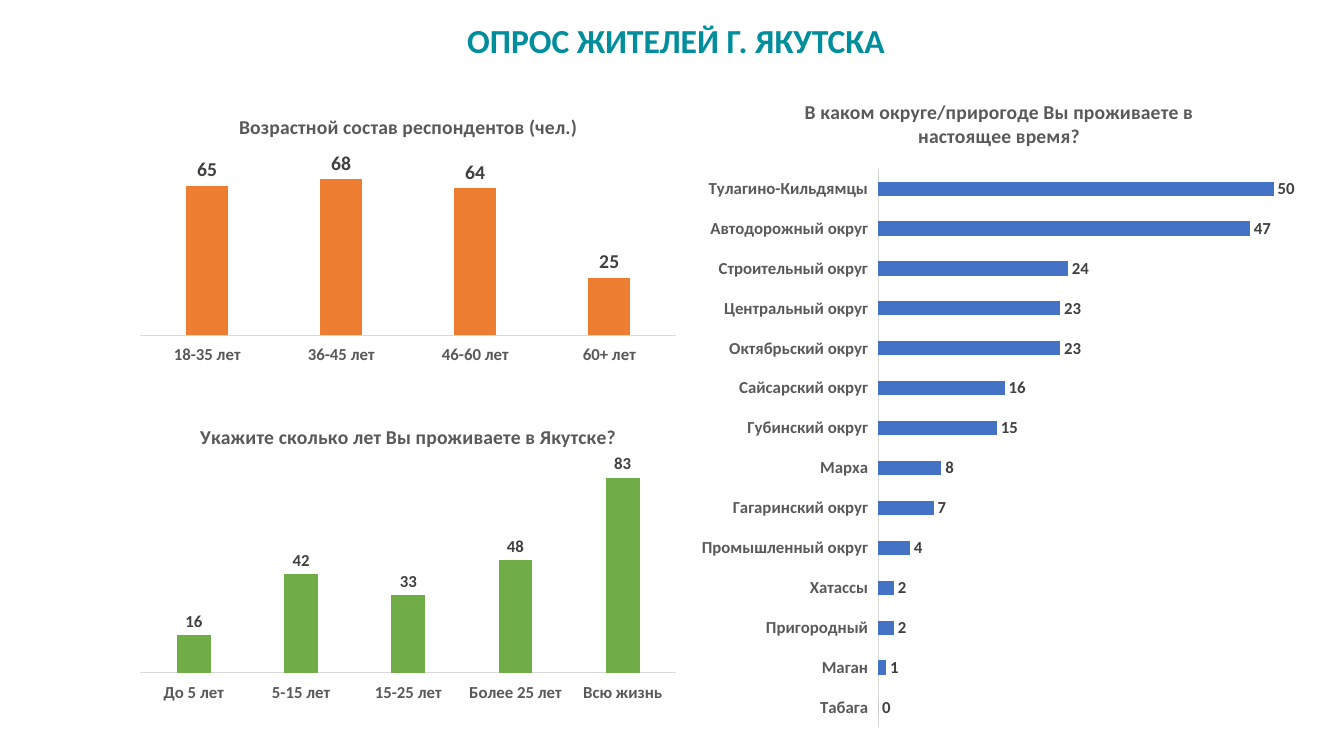
from dataclasses import dataclass

from pptx import Presentation
from pptx.chart.chart import Chart
from pptx.chart.data import CategoryChartData
from pptx.dml.color import RGBColor
from pptx.enum.chart import XL_CHART_TYPE as Kind
from pptx.enum.chart import XL_LABEL_POSITION as Pos
from pptx.enum.chart import XL_TICK_LABEL_POSITION as Tick
from pptx.enum.chart import XL_TICK_MARK as Mark
from pptx.enum.text import MSO_ANCHOR as Anchor
from pptx.enum.text import MSO_AUTO_SIZE as Fit
from pptx.enum.text import PP_ALIGN as Align
from pptx.oxml import parse_xml
from pptx.oxml.ns import nsdecls, qn
from pptx.slide import Slide
from pptx.text.text import Font
from pptx.util import Inches, Pt


@dataclass(frozen=True)
class Theme:
    font: str = "Calibri"
    teal: str = "008E9C"
    gray: str = "595959"
    dark: str = "404040"
    rule: str = "D9D9D9"
    orange: str = "ED7D31"
    green: str = "70AD47"
    blue: str = "4472C4"
    head: int = 24
    title: int = 14
    axis: int = 12


@dataclass(frozen=True)
class Survey:
    title: str
    kind: Kind
    box: tuple[float, float, float, float]
    plot: tuple[float, float, float, float]  # shares of the chart area
    data: dict[str, int]
    color: str
    gap: int
    lap: int
    top: int  # end of the value axis
    size: int  # value labels


THEME = Theme()
SURVEYS = [
    Survey("Возрастной состав респондентов (чел.)", Kind.COLUMN_CLUSTERED,
           (1.28, 0.98, 5.54, 2.64), (0.02, 0.2, 0.96, 0.69),
           {"18-35 лет": 65, "36-45 лет": 68, "46-60 лет": 64, "60+ лет": 25},
           THEME.orange, 219, -27, 80, 14),
    Survey("Укажите сколько лет Вы проживаете в Якутске?", Kind.COLUMN_CLUSTERED,
           (1.28, 4.05, 5.54, 2.95), (0.02, 0.18, 0.96, 0.71),
           {"До 5 лет": 16, "5-15 лет": 42, "15-25 лет": 33,
            "Более 25 лет": 48, "Всю жизнь": 83},
           THEME.green, 219, -27, 90, 12),
    Survey("В каком округе/прирогоде Вы проживаете в настоящее время?",
           Kind.BAR_CLUSTERED,
           (6.91, 0.75, 6, 6.6), (0.3, 0.14, 0.68, 0.84),
           {"Табага": 0, "Маган": 1, "Пригородный": 2, "Хатассы": 2,
            "Промышленный округ": 4, "Гагаринский округ": 7, "Марха": 8,
            "Губинский округ": 15, "Сайсарский округ": 16,
            "Октябрьский округ": 23, "Центральный округ": 23,
            "Строительный округ": 24, "Автодорожный округ": 47,
            "Тулагино-Кильдямцы": 50},
           THEME.blue, 182, 0, 52, 12),
]


def style(font: Font, size: int, color: str) -> None:
    font.name, font.size, font.bold = THEME.font, Pt(size), True
    font.color.rgb = RGBColor.from_string(color)


def set_plot(chart: Chart, plot: tuple[float, float, float, float]) -> None:
    """Fix the inner plot area as shares of the chart."""
    area = chart.element.find(".//" + qn("c:plotArea"))
    for old in area.findall(qn("c:layout")):
        area.remove(old)
    modes = '<c:xMode val="edge"/><c:yMode val="edge"/>'
    sizes = "".join(f'<c:{k} val="{v}"/>' for k, v in zip("xywh", plot))
    area.insert(0, parse_xml(
        f'<c:layout {nsdecls("c")}><c:manualLayout><c:layoutTarget val="inner"/>'
        f"{modes}{sizes}</c:manualLayout></c:layout>"))


def add_survey(slide: Slide, item: Survey) -> None:
    data = CategoryChartData()
    data.categories = list(item.data)
    data.add_series("Series 1", list(item.data.values()))
    frame = slide.shapes.add_chart(item.kind, *map(Inches, item.box), data)
    chart = frame.chart
    chart.has_legend = False
    chart.font.name, chart.font.size = THEME.font, Pt(10)
    set_plot(chart, item.plot)

    # Title
    chart.has_title = True
    text = chart.chart_title.text_frame
    text.text = item.title
    style(text.paragraphs[0].runs[0].font, THEME.title, THEME.gray)
    chart.chart_title.include_in_layout = False

    # Axes
    cat = chart.category_axis
    cat.major_tick_mark = cat.minor_tick_mark = Mark.NONE
    cat.tick_label_position = Tick.LOW
    cat.has_major_gridlines = False
    style(cat.tick_labels.font, THEME.axis, THEME.gray)
    cat.format.line.color.rgb = RGBColor.from_string(THEME.rule)
    cat.format.line.width = Pt(0.75)
    val = chart.value_axis
    val.minimum_scale, val.maximum_scale = 0, item.top
    val.has_major_gridlines = False
    val.visible = False

    # Bars and value labels
    bars = chart.plots[0]
    bars.gap_width, bars.overlap = item.gap, item.lap
    bars.vary_by_categories = False
    fill = bars.series[0].format.fill
    fill.solid()
    fill.fore_color.rgb = RGBColor.from_string(item.color)
    labels = bars.series[0].data_labels
    labels.show_value = True
    labels.position = Pos.OUTSIDE_END
    style(labels.font, item.size, THEME.dark)


def add_head(slide: Slide, text: str) -> None:
    head = slide.shapes.title
    head.left, head.top = Inches(0.88), Inches(0.15)
    head.width, head.height = Inches(11.65), Inches(0.5)
    frame = head.text_frame
    frame.text = text
    frame.word_wrap = True
    frame.auto_size = Fit.SHAPE_TO_FIT_TEXT
    frame.vertical_anchor = Anchor.TOP
    para = frame.paragraphs[0]
    para.alignment = Align.CENTER
    style(para.runs[0].font, THEME.head, THEME.teal)


def main() -> None:
    deck = Presentation()
    deck.slide_width, deck.slide_height = Inches(13.33), Inches(7.5)
    slide = deck.slides.add_slide(deck.slide_layouts[5])
    add_head(slide, "ОПРОС ЖИТЕЛЕЙ Г. ЯКУТСКА")
    for item in SURVEYS:
        add_survey(slide, item)
    deck.save("out.pptx")


if __name__ == "__main__":
    main()
